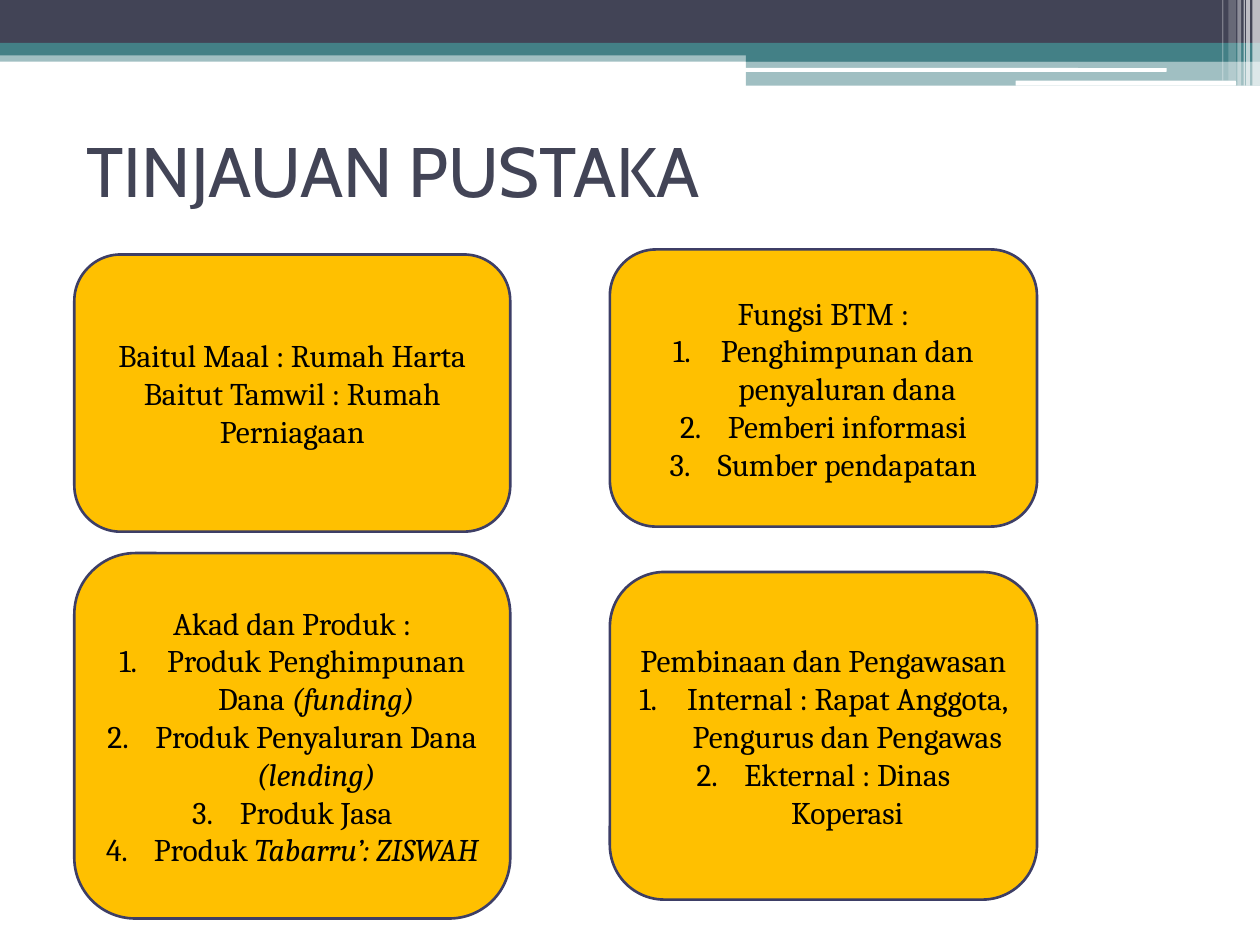
from dataclasses import dataclass

from lxml.etree import SubElement
from pptx import Presentation
from pptx.dml.color import RGBColor as Color
from pptx.enum.shapes import MSO_SHAPE as Preset
from pptx.enum.text import MSO_ANCHOR as Anchor, PP_ALIGN as Align
from pptx.oxml.ns import qn
from pptx.util import Inches, Pt

COLUMNS, ROWS = 100, 75
SLIDE_WIDTH, SLIDE_HEIGHT = Inches(10), Inches(7.5)


@dataclass(frozen=True)
class Theme:
    dark: str = "424456"
    teal: str = "438086"
    white: str = "FFFFFF"
    card: str = "FFC000"
    border: str = "3D3E66"
    ink: str = "000000"
    title_font: str = "Cabin"
    body_font: str = "Cambria"
    title_size: int = 40
    body_size: int = 18
    border_width: float = 1.5
    indent: float = 0.38


THEME = Theme()

BANDS = [
    (Preset.RECTANGLE, (0, 4, 100, 0.9), THEME.teal, 50),
    (Preset.RECTANGLE, (0, 0, 100, 3.4), THEME.dark, 100),
    (Preset.RECTANGLE, (0, 3.4, 100, 1), THEME.teal, 100),
    (Preset.RECTANGLE, (59.2, 3.9, 40.8, 1), THEME.teal, 100),
    (Preset.RECTANGLE, (59.2, 4.8, 40.8, 2), THEME.teal, 50),
    (Preset.ROUNDED_RECTANGLE, (59.1, 5.4, 33.5, 0.3), THEME.white, 100),
    (Preset.ROUNDED_RECTANGLE, (80.6, 6.4, 17.5, 0.4), THEME.white, 100),
]

STRIPES = [
    (99.4, 0.6, 6.8, 65),
    (98.9, 0.3, 6.8, 65),
    (98.7, 0.1, 6.8, 60),
    (98.2, 0.3, 6.8, 40),
    (97.5, 0.6, 6.4, 20),
    (97, 0.1, 6.4, 30),
]

LEFT_CARD, RIGHT_CARD = (5.9, 34.6), (48.4, 33.9)

CARDS = [
    (LEFT_CARD, (20.2, 22),
     ["Baitul Maal : Rumah Harta", "Baitut Tamwil : Rumah Perniagaan"], []),
    (RIGHT_CARD, (19.8, 22), ["Fungsi BTM :"],
     [("Penghimpunan dan penyaluran dana", ""),
      ("Pemberi informasi", ""),
      ("Sumber pendapatan", "")]),
    (LEFT_CARD, (43.9, 29), ["Akad dan Produk :"],
     [("Produk Penghimpunan Dana ", "(funding)"),
      ("Produk Penyaluran Dana ", "(lending)"),
      ("Produk Jasa", ""),
      ("Produk ", "Tabarru’: ZISWAH")]),
    (RIGHT_CARD, (45.4, 26), ["Pembinaan dan Pengawasan"],
     [("Internal : Rapat Anggota, Pengurus dan Pengawas", ""),
      ("Ekternal : Dinas Koperasi", "")]),
]


def place(left, top, width, height):
    column, row = SLIDE_WIDTH / COLUMNS, SLIDE_HEIGHT / ROWS
    return [round(length) for length in
            (left * column, top * row, width * column, height * row)]


def add_block(slide, preset, area, color, opacity=100):
    shape = slide.shapes.add_shape(preset, *place(*area))
    shape.shadow.inherit = False
    shape.fill.solid()
    shape.fill.fore_color.rgb = Color.from_string(color)
    shape.line.fill.background()
    if opacity < 100:
        fill = shape.fill._xPr.find(qn("a:solidFill"))
        SubElement(fill[0], qn("a:alpha")).set("val", str(opacity * 1000))
    return shape


def add_run(paragraph, text, font, size, color, italic=False):
    run = paragraph.add_run()
    run.text = text
    run.font.name = font
    run.font.size = Pt(size)
    run.font.italic = italic
    run.font.color.rgb = Color.from_string(color)


def add_title(slide, text, area):
    frame = slide.shapes.add_textbox(*place(*area)).text_frame
    frame.word_wrap = True
    frame.vertical_anchor = Anchor.MIDDLE
    add_run(frame.paragraphs[0], text,
            THEME.title_font, THEME.title_size, THEME.dark)


def number(paragraph):
    properties = paragraph._p.get_or_add_pPr()
    indent = Inches(THEME.indent)
    properties.set("marL", str(indent))
    properties.set("indent", str(-indent))
    SubElement(properties, qn("a:buFont")).set("typeface", "+mj-lt")
    SubElement(properties, qn("a:buAutoNum")).set("type", "arabicPeriod")


def add_card(slide, area, headings, items):
    shape = add_block(slide, Preset.ROUNDED_RECTANGLE, area, THEME.card)
    shape.line.color.rgb = Color.from_string(THEME.border)
    shape.line.width = Pt(THEME.border_width)
    frame = shape.text_frame
    frame.word_wrap = True
    frame.vertical_anchor = Anchor.MIDDLE
    entries = [(heading, "", False) for heading in headings]
    entries += [(plain, italic, True) for plain, italic in items]
    for index, (plain, italic, numbered) in enumerate(entries):
        paragraph = frame.add_paragraph() if index else frame.paragraphs[0]
        paragraph.alignment = Align.CENTER
        if numbered:
            number(paragraph)
        for text, slanted in ((plain, False), (italic, True)):
            if text:
                add_run(paragraph, text, THEME.body_font, THEME.body_size,
                        THEME.ink, slanted)


def main():
    presentation = Presentation()
    presentation.slide_width = SLIDE_WIDTH
    presentation.slide_height = SLIDE_HEIGHT
    slide = presentation.slides.add_slide(presentation.slide_layouts[6])
    for band in BANDS:
        add_block(slide, *band)
    for left, width, height, opacity in STRIPES:
        add_block(slide, Preset.RECTANGLE, (left, 0, width, height),
                  THEME.white, opacity)
    add_title(slide, "TINJAUAN PUSTAKA", (5.9, 7.6, 90, 11.7))
    for (left, width), (top, height), headings, items in CARDS:
        add_card(slide, (left, top, width, height), headings, items)
    presentation.save("out.pptx")


if __name__ == "__main__":
    main()
